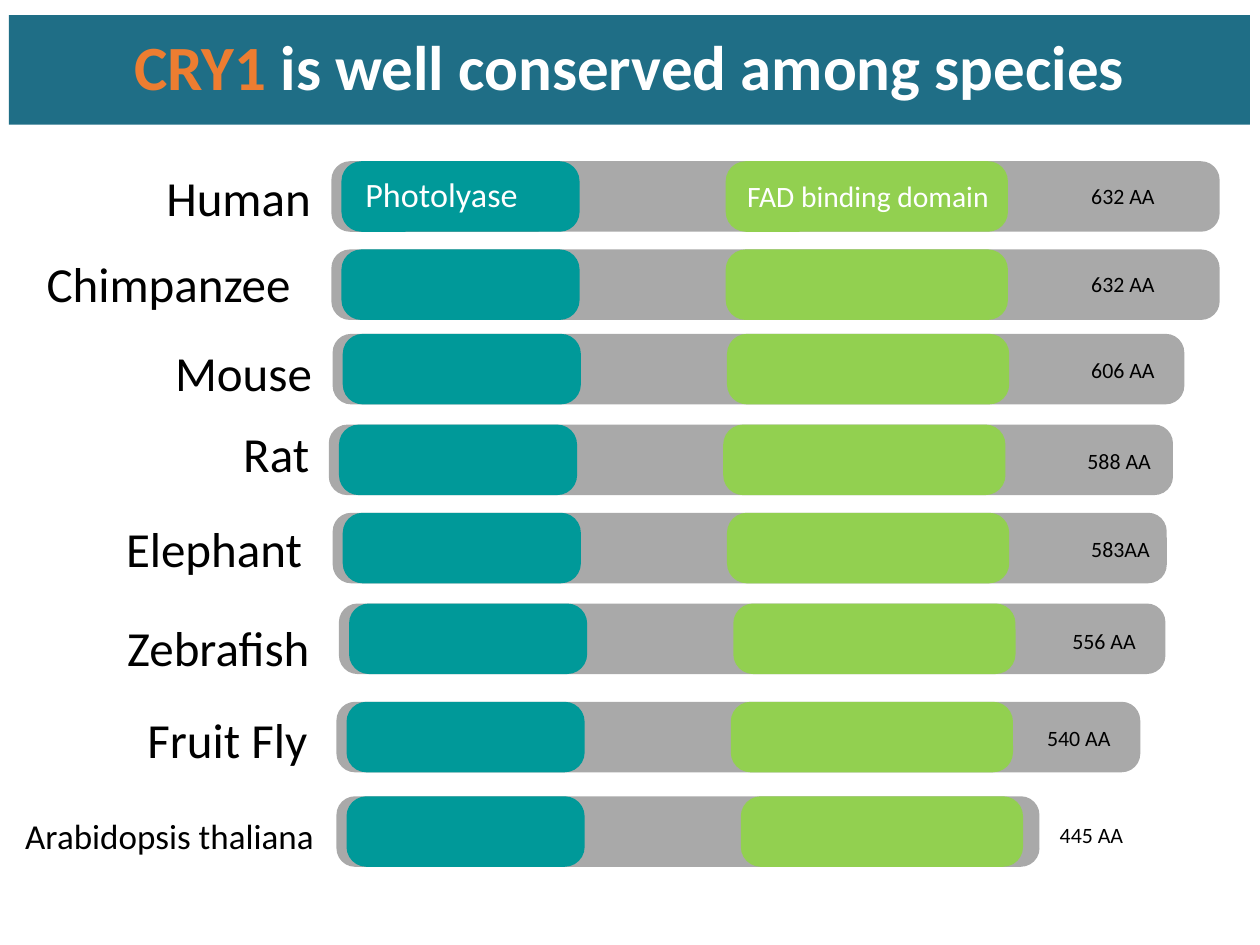
from pptx import Presentation
from pptx.dml.color import RGBColor
from pptx.enum.shapes import MSO_SHAPE as SHAPE
from pptx.enum.text import MSO_ANCHOR as ANCHOR, MSO_AUTO_SIZE as AUTO, PP_ALIGN as ALIGN
from pptx.util import Inches, Pt

BLUE = RGBColor(0x1F, 0x6E, 0x86)
ORANGE = RGBColor(0xED, 0x7D, 0x31)
GRAY = RGBColor(0xA9, 0xA9, 0xA9)
GREEN = RGBColor(0x92, 0xD0, 0x50)
TEAL = RGBColor(0x00, 0x99, 0x99)
WHITE = RGBColor(0xFF, 0xFF, 0xFF)
BLACK = RGBColor(0x00, 0x00, 0x00)


def add_block(shapes, kind, x, y, w, h, color, corner=None):
    sp = shapes.add_shape(kind, Inches(x), Inches(y), Inches(w), Inches(h))
    sp.shadow.inherit = False
    sp.fill.solid()
    sp.fill.fore_color.rgb = color
    sp.line.fill.background()
    if corner:
        sp.adjustments[0] = corner
    return sp


def add_label(shapes, text, x, y, w, h, size, color=BLACK, wrap=False):
    tf = shapes.add_textbox(Inches(x), Inches(y), Inches(w), Inches(h)).text_frame
    frame = {"word_wrap": wrap, "auto_size": AUTO.SHAPE_TO_FIT_TEXT,
             "vertical_anchor": ANCHOR.MIDDLE}
    frame.update({f"margin_{side}": Inches(0.04)
                  for side in ("left", "top", "right", "bottom")})
    for key, value in frame.items():
        setattr(tf, key, value)
    r = tf.paragraphs[0].add_run()
    r.text = text
    for key, value in {"name": "Calibri", "size": Pt(size)}.items():
        setattr(r.font, key, value)
    r.font.color.rgb = color


prs = Presentation()
prs.slide_width, prs.slide_height = Inches(10), Inches(7.5)
s = prs.slides.add_slide(prs.slide_layouts[6])

# Title band
band = add_block(s.shapes, SHAPE.RECTANGLE, 0.07, 0.12, 9.85, 0.87, BLUE)
band.text_frame.word_wrap = True
band.text_frame.vertical_anchor = ANCHOR.MIDDLE
p = band.text_frame.paragraphs[0]
p.alignment = ALIGN.CENTER
p.line_spacing = 0.9
for text, color in (("CRY1", ORANGE), (" is well conserved among species", WHITE)):
    r = p.add_run()
    r.text = text
    for key, value in {"name": "Calibri", "size": Pt(36), "bold": True}.items():
        setattr(r.font, key, value)
    r.font.color.rgb = color

# Species: name, (left, top, width, size) of the name,
# (left, top, width) of the protein bar, length, (left, top) of the length
SPECIES = [
    ("Human", (1.28, 1.29, 1.24, 28), (2.63, 1.28, 7.05), "632 AA", (8.62, 1.41)),
    ("Chimpanzee", (0.33, 1.97, 2.03, 28), (2.63, 1.98, 7.05), "632 AA", (8.62, 2.11)),
    ("Mouse", (1.35, 2.68, 1.18, 28), (2.64, 2.65, 6.76), "606 AA", (8.62, 2.79)),
    ("Rat", (1.89, 3.32, 0.61, 28), (2.61, 3.37, 6.7), "588 AA", (8.59, 3.51)),
    ("Elephant", (0.96, 4.07, 1.49, 28), (2.64, 4.07, 6.62), "583AA", (8.62, 4.21)),
    ("Zebrafish", (0.97, 4.86, 1.54, 28), (2.69, 4.79, 6.56), "556 AA", (8.47, 4.94)),
    ("Fruit Fly", (1.13, 5.59, 1.36, 28), (2.67, 5.57, 6.38), "540 AA", (8.27, 5.71)),
    ("Arabidopsis thaliana", (0.16, 6.42, 2.39, 20), (2.67, 6.32, 5.58),
     "445 AA", (8.37, 6.48)),
]

for name, (name_x, name_y, name_w, size), (x, y, w), length, (len_x, len_y) in SPECIES:
    row = s.shapes.add_group_shape().shapes
    fad_x = x + (3.21 if name.startswith("Arabidopsis") else 3.13)
    # Protein bar with its two domains
    add_block(row, SHAPE.ROUNDED_RECTANGLE, x, y, w, 0.56, GRAY, 0.264)
    add_block(row, SHAPE.ROUNDED_RECTANGLE, fad_x, y, 2.24, 0.56, GREEN, 0.283)
    add_block(row, SHAPE.ROUNDED_RECTANGLE, x + 0.08, y, 1.89, 0.56, TEAL, 0.283)
    # Name and length
    add_label(row, name, name_x, name_y, name_w, 0.42 if size == 20 else 0.55, size)
    add_label(row, length, len_x, len_y, 0.78, 0.29, 12.5, wrap=True)
    # Domain names, on the first row only
    if name == "Human":
        add_label(row, "FAD binding domain", 5.89, 1.37, 2.24, 0.36, 16.9, WHITE, True)
        add_label(row, "Photolyase", 2.86, 1.33, 1.3, 0.41, 19.5, WHITE)

prs.save("out.pptx")
